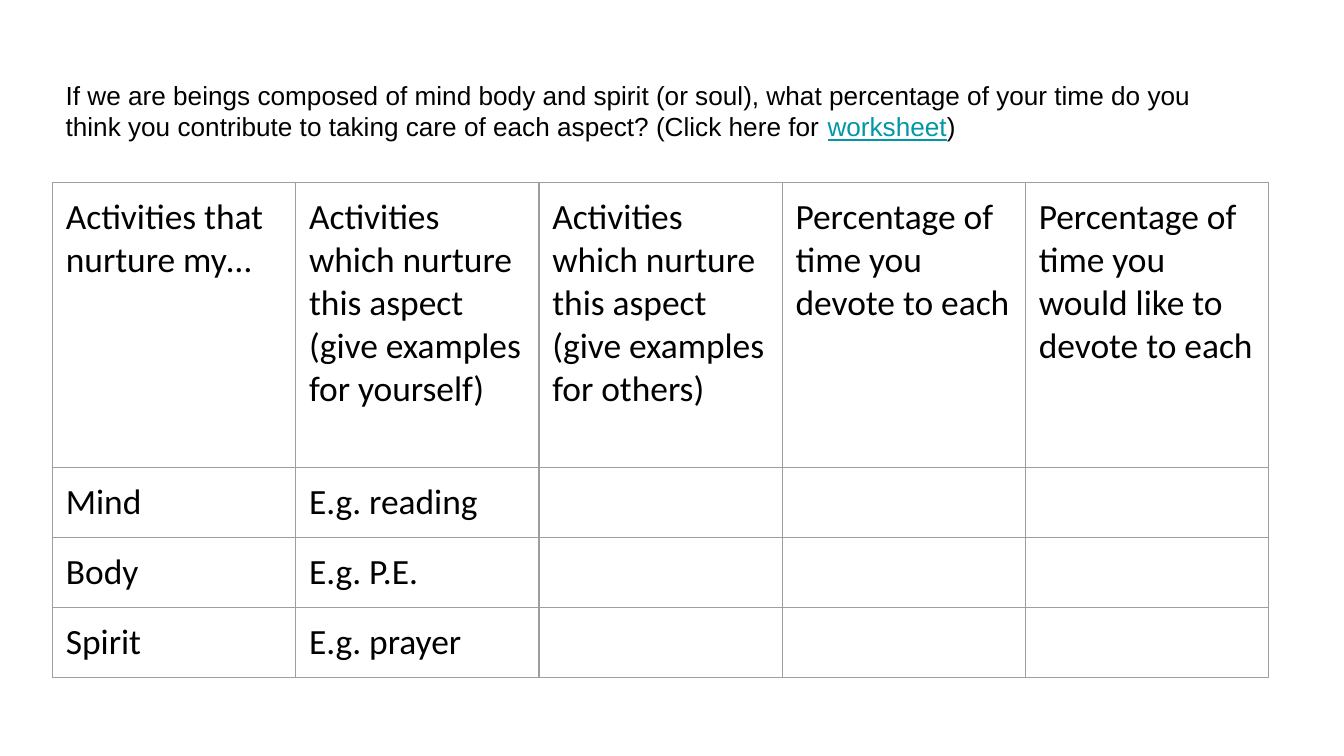
"""Build a slide with a question and a worksheet table on mind, body and spirit."""
from typing import NamedTuple

from lxml import etree
from pptx import Presentation
from pptx.dml.color import RGBColor
from pptx.oxml.ns import qn
from pptx.util import Inches, Pt

SLIDE_WIDTH = 10
SLIDE_HEIGHT = SLIDE_WIDTH * 9 / 16
LEFT = 0.39
MARGIN = Inches(0.1)
BLACK, LINK, BORDER = "000000", "0097A7", "9E9E9E"
BORDER_SIDES = ("lnL", "lnR", "lnT", "lnB")
COLUMN_WIDTH = 1.81
HEADER_HEIGHT, ROW_HEIGHT = 2.12, 0.52


class TextRun(NamedTuple):
    """A stretch of text with its own colour and underline."""
    text: str
    color: str = BLACK
    underline: bool = False


QUESTION = (
    TextRun("If we are beings composed of mind body and spirit (or soul), what percentage of "
            "your time do you think you contribute to taking care of each aspect? (Click here for "),
    TextRun("worksheet", LINK, True),
    TextRun(")"),
)
ROWS = (
    ("Activities that nurture my…",
     "Activities which nurture this aspect (give examples for yourself)",
     "Activities which nurture this aspect (give examples for others)",
     "Percentage of time you devote to each",
     "Percentage of time you would like to devote to each"),
    ("Mind", "E.g. reading", "", "", ""),
    ("Body", "E.g. P.E.", "", "", ""),
    ("Spirit", "E.g. prayer", "", "", ""),
)


def format_font(font, name: str, size: float, color: str) -> None:
    """Set typeface, size and colour."""
    font.name = name
    font.size = Pt(size)
    font.color.rgb = RGBColor.from_string(color)


def set_margins(holder) -> None:
    """Give a text frame or cell equal margins."""
    holder.margin_left = holder.margin_right = MARGIN
    holder.margin_top = holder.margin_bottom = MARGIN


def draw_question(slide, runs: tuple[TextRun, ...]) -> None:
    """Draw the question above the table."""
    box = slide.shapes.add_textbox(Inches(LEFT), Inches(0.49), Inches(8.8), Inches(0.88))
    text_frame = box.text_frame
    text_frame.word_wrap = True
    set_margins(text_frame)
    paragraph = text_frame.paragraphs[0]
    for part in runs:
        run = paragraph.add_run()
        run.text = part.text
        run.font.underline = part.underline
        format_font(run.font, "Arial", 14, part.color)


def add_borders(cell) -> None:
    """Draw a thin line on each side of a cell."""
    properties = cell._tc.get_or_add_tcPr()
    for position, side in enumerate(BORDER_SIDES):
        line = etree.Element(qn(f"a:{side}"), w=str(Pt(0.75)))
        fill = etree.SubElement(line, qn("a:solidFill"))
        etree.SubElement(fill, qn("a:srgbClr"), val=BORDER)
        properties.insert(position, line)


def draw_table(slide, rows: tuple[tuple[str, ...], ...]) -> None:
    """Draw the worksheet table."""
    column_count = len(rows[0])
    height = HEADER_HEIGHT + ROW_HEIGHT * (len(rows) - 1)
    table = slide.shapes.add_table(len(rows), column_count, Inches(LEFT), Inches(1.36),
                                   Inches(COLUMN_WIDTH * column_count), Inches(height)).table
    table.first_row = table.horz_banding = False
    for column in table.columns:
        column.width = Inches(COLUMN_WIDTH)
    for index, texts in enumerate(rows):
        table.rows[index].height = Inches(ROW_HEIGHT if index else HEADER_HEIGHT)
        for cell, text in zip(table.rows[index].cells, texts):
            cell.fill.background()
            add_borders(cell)
            set_margins(cell)
            if text:
                cell.text_frame.text = text
                format_font(cell.text_frame.paragraphs[0].runs[0].font, "Calibri", 19, BLACK)


def main() -> None:
    """Build and save the presentation."""
    presentation = Presentation()
    presentation.slide_width = Inches(SLIDE_WIDTH)
    presentation.slide_height = Inches(SLIDE_HEIGHT)
    slide = presentation.slides.add_slide(presentation.slide_layouts[6])
    draw_question(slide, QUESTION)
    draw_table(slide, ROWS)
    presentation.save("out.pptx")


if __name__ == "__main__":
    main()
